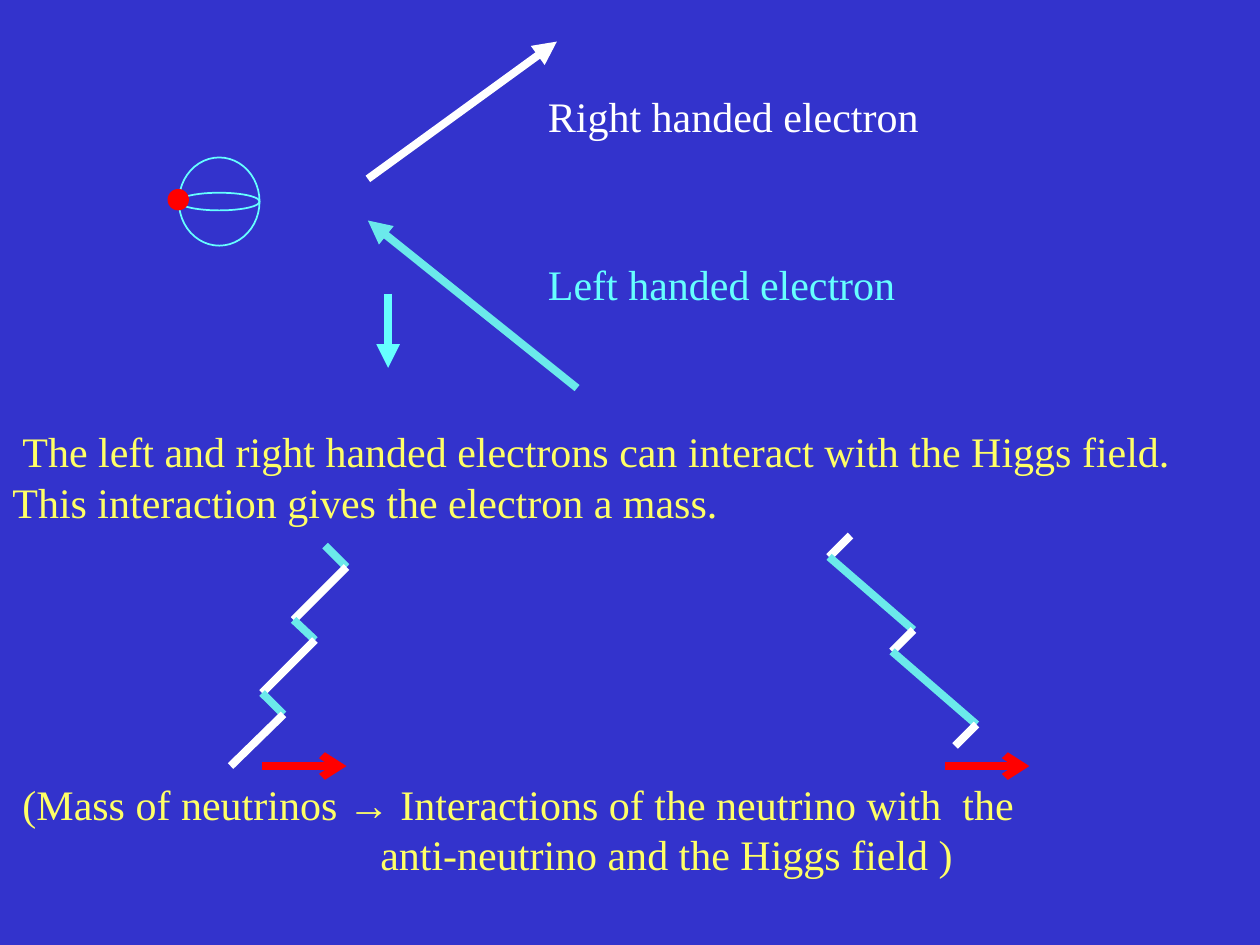
"""Build a slide on electron handedness and mass from the Higgs field."""
import itertools

import pptx
import pptx.dml.color
import pptx.enum.shapes
import pptx.oxml
import pptx.oxml.ns
import pptx.util

Inches = pptx.util.Inches
Pt = pptx.util.Pt

BLUE, WHITE, RED = "3333CC", "FFFFFF", "FF0000"
CYAN, TEAL, YELLOW = "66FFFF", "6BE9EB", "FFFF66"

ARROWS = [
    ((4.58, 3.08), (2.92, 1.75), TEAL, "triangle"),
    ((3.08, 2.33), (3.08, 2.92), CYAN, "triangle"),
    ((2.92, 1.42), (4.42, 0.33), WHITE, "triangle"),
    ((2.08, 6.08), (2.75, 6.08), RED, "arrow"),
    ((7.5, 6.08), (8.17, 6.08), RED, "arrow"),
]
ZIGZAGS = [
    ((TEAL, WHITE), [(2.58, 4.33), (2.75, 4.5), (2.33, 4.92), (2.5, 5.08),
                     (2.08, 5.5), (2.25, 5.67), (1.83, 6.08)]),
    ((WHITE, TEAL), [(6.75, 4.25), (6.58, 4.42), (7.25, 5), (7.08, 5.17),
                     (7.75, 5.75), (7.58, 5.92)]),
]
ELLIPSES = [
    ((1.42, 1.25, 0.64, 0.7), None, CYAN),
    ((1.42, 1.53, 0.64, 0.14), None, CYAN),
    ((1.33, 1.5, 0.17, 0.17), RED, None),
]
TEXTS = [
    ((4.25, 2, 2.99, 0.51), CYAN, [("Left handed electron", 0, 0)]),
    ((4.25, 0.67, 3.18, 0.51), WHITE, [("Right handed electron", 0, 0)]),
    ((0, 3.33, 9.48, 4.14), YELLOW, [
        ("The left and right handed electrons can interact with the Higgs field.", 0.08, 0),
        ("This interaction gives the electron a mass.", 0, 0),
        ("(Mass of neutrinos → Interactions of the neutrino with  the", 0.08, 144),
        ("anti-neutrino and the Higgs field )", 2.92, 0),
    ]),
]
FONT = {"name": "Times New Roman", "size": Pt(24)}


def rgb(value):
    """Return the colour for a hex string."""
    return pptx.dml.color.RGBColor.from_string(value)


def add_line(page, start, end, color, head=None):
    """Draw a thick straight line, with an arrowhead at its end if named."""
    line = page.shapes.add_connector(
        pptx.enum.shapes.MSO_CONNECTOR.STRAIGHT, *map(Inches, start + end))
    line.line.color.rgb = rgb(color)
    line.line.width = Pt(4.5)
    properties = line._element.spPr
    if head:
        outline = properties.find(pptx.oxml.ns.qn("a:ln"))
        outline.append(pptx.oxml.parse_xml(
            f'<a:tailEnd {pptx.oxml.ns.nsdecls("a")} type="{head}"/>'))
    properties.append(pptx.oxml.parse_xml(
        f'<a:effectLst {pptx.oxml.ns.nsdecls("a")}/>'))


def add_ellipse(page, place, fill, outline):
    """Draw an ellipse that is either filled or outlined."""
    shape = page.shapes.add_shape(
        pptx.enum.shapes.MSO_SHAPE.OVAL, *map(Inches, place))
    shape.shadow.inherit = False
    if fill:
        shape.fill.solid()
        shape.fill.fore_color.rgb = rgb(fill)
    else:
        shape.fill.background()
    if outline:
        shape.line.color.rgb = rgb(outline)
        shape.line.width = Pt(1)
    else:
        shape.line.fill.background()


def add_text(page, place, color, lines):
    """Write lines given as wording, indent in inches and space before in points."""
    frame = page.shapes.add_textbox(*map(Inches, place)).text_frame
    frame.word_wrap = True
    for index, (wording, indent, space) in enumerate(lines):
        para = frame.add_paragraph() if index else frame.paragraphs[0]
        para._p.get_or_add_pPr().set("marL", str(Inches(indent)))
        para.line_spacing = Pt(28.8)
        para.space_before = Pt(space)
        span = para.add_run()
        span.text = wording
        for key, value in FONT.items():
            setattr(span.font, key, value)
        span.font.color.rgb = rgb(color)


def main():
    """Build and save the deck."""
    deck = pptx.Presentation()
    deck.slide_width, deck.slide_height = Inches(10), Inches(7.5)
    page = deck.slides.add_slide(deck.slide_layouts[6])
    page.background.fill.solid()
    page.background.fill.fore_color.rgb = rgb(BLUE)
    for arrow in ARROWS:
        add_line(page, *arrow)
    for text in TEXTS:
        add_text(page, *text)
    for colors, points in ZIGZAGS:
        for start, end, color in zip(points, points[1:], itertools.cycle(colors)):
            add_line(page, start, end, color)
    for ellipse in ELLIPSES:
        add_ellipse(page, *ellipse)
    deck.save("out.pptx")


if __name__ == "__main__":
    main()
